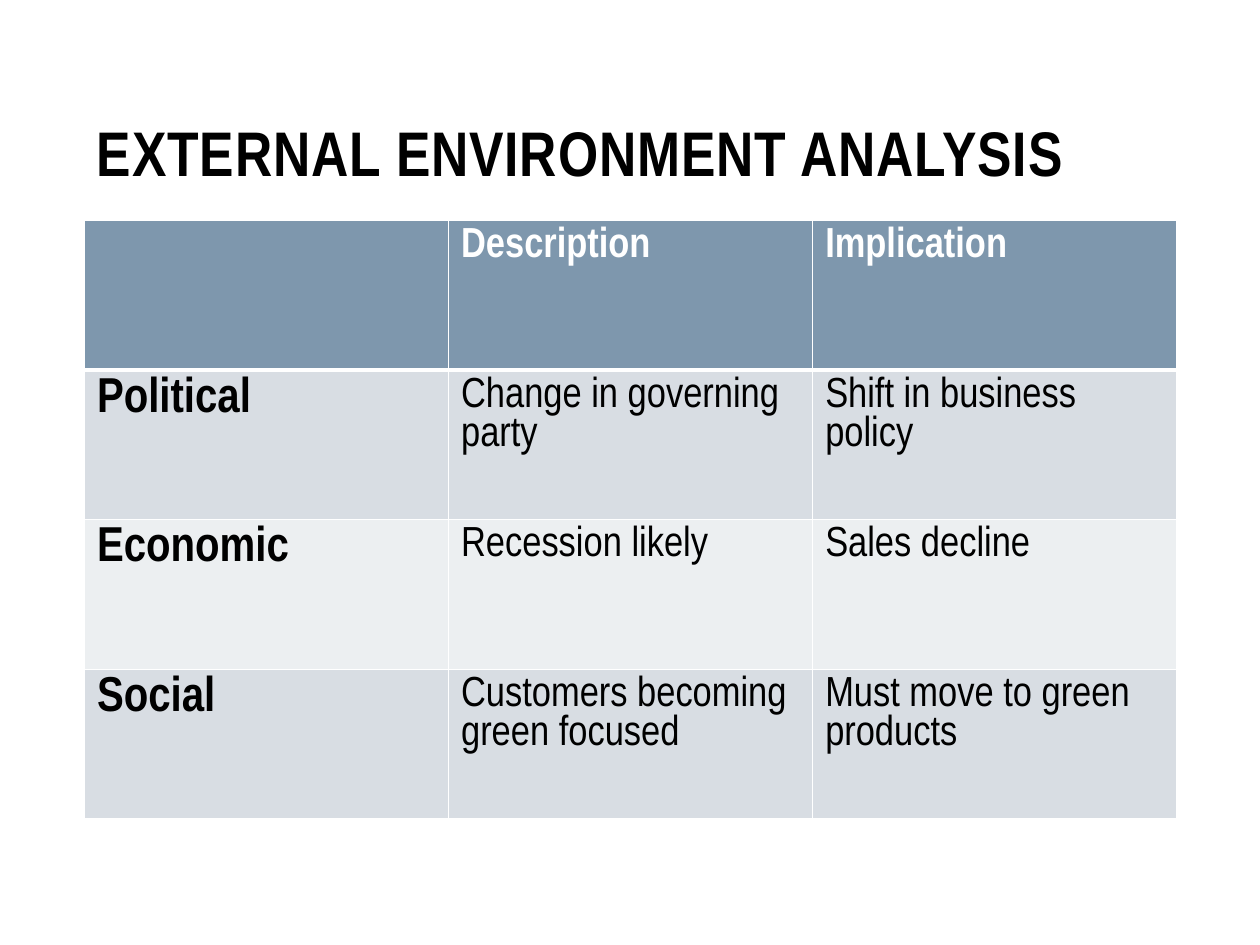
from lxml.etree import SubElement
from pptx import Presentation
from pptx.dml.color import RGBColor
from pptx.enum.text import MSO_ANCHOR
from pptx.oxml.ns import qn
from pptx.util import Inches, Pt

TITLE = "EXTERNAL ENVIRONMENT ANALYSIS"
ROWS = [
    ("", "Description", "Implication"),
    ("Political", "Change in governing party", "Shift in business policy"),
    ("Economic", "Recession likely", "Sales decline"),
    ("Social", "Customers becoming green focused", "Must move to green products"),
]
FONT = "Arial Narrow"
COLORS = {
    "text": "000000",
    "white": "FFFFFF",
    "header": "7E97AD",
    "band_dark": "D8DDE3",
    "band_light": "ECEFF1",
}
LEFT, WIDTH = 0.67, 8.67
TITLE_TOP, TITLE_HEIGHT = 0.3, 1.25
TABLE_TOP, TABLE_HEIGHT = 1.75, 4.75


def rgb(name):
    return RGBColor.from_string(COLORS[name])


def write(tf, text, size, color, bold):
    p = tf.paragraphs[0]
    p.text = text
    for r in p.runs:
        r.font.name = FONT
        r.font.size = Pt(size)
        r.font.bold = bold
        r.font.color.rgb = rgb(color)
    return p


def set_borders(cell, widths):
    """Draw white borders; widths maps L, R, T and B to points."""
    tcPr = cell._tc.get_or_add_tcPr()
    for i, (side, width) in enumerate(widths.items()):
        ln = tcPr.makeelement(qn(f"a:ln{side}"), {"w": str(Pt(width))})
        fill = SubElement(ln, qn("a:solidFill"))
        SubElement(fill, qn("a:srgbClr"), val=COLORS["white"])
        tcPr.insert(i, ln)


def add_title(s):
    sp = s.shapes.add_textbox(Inches(LEFT), Inches(TITLE_TOP),
                              Inches(WIDTH), Inches(TITLE_HEIGHT))
    tf = sp.text_frame
    tf.word_wrap = True
    tf.vertical_anchor = MSO_ANCHOR.BOTTOM
    p = write(tf, TITLE, 36, "text", True)
    p.runs[0].font._element.set("spc", "50")


def add_analysis_table(s):
    table = s.shapes.add_table(len(ROWS), len(ROWS[0]), Inches(LEFT), Inches(TABLE_TOP),
                               Inches(WIDTH), Inches(TABLE_HEIGHT)).table
    for i, row in enumerate(ROWS):
        header = i == 0
        band = "header" if header else "band_dark" if i % 2 else "band_light"
        for j, text in enumerate(row):
            cell = table.cell(i, j)
            cell.fill.solid()
            cell.fill.fore_color.rgb = rgb(band)
            set_borders(cell, {"L": 1, "R": 1, "T": 3 if i == 1 else 1,
                               "B": 3 if header else 1})
            label = j == 0
            write(cell.text_frame, text, 28 if label else 24,
                  "white" if header else "text", header or label)


def main():
    prs = Presentation()
    prs.slide_width, prs.slide_height = Inches(10), Inches(7.5)
    s = prs.slides.add_slide(prs.slide_layouts[6])
    s.background.fill.solid()
    s.background.fill.fore_color.rgb = rgb("white")
    add_title(s)
    add_analysis_table(s)
    prs.save("out.pptx")


if __name__ == "__main__":
    main()
